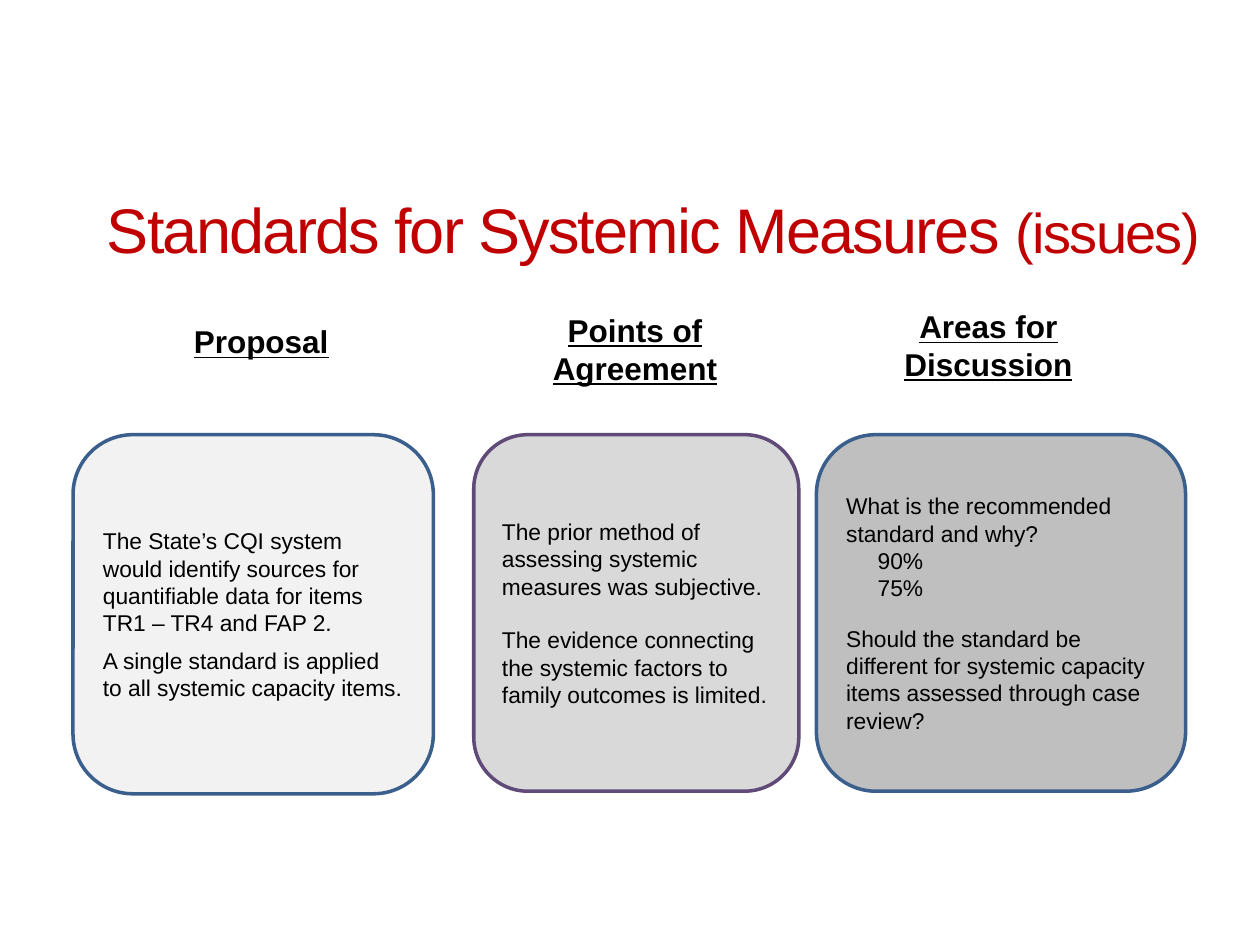
from pptx import Presentation
from pptx.dml.color import RGBColor
from pptx.enum.shapes import MSO_SHAPE as Shape
from pptx.enum.text import MSO_ANCHOR as Anchor, MSO_AUTO_SIZE as AutoSize, PP_ALIGN as Align
from pptx.util import Inches, Pt

COLORS = {
    "title": "C00000", "text": "000000", "blue": "3A5F8C", "purple": "5F4A78",
    "light": "F2F2F2", "medium": "D9D9D9", "dark": "BFBFBF",
}
TITLE = [("Standards for Systemic Measures ", 36), ("(issues)", 32)]
HEADINGS = [
    ("Proposal", (1.44, 2.51, 1.27, 0.39), False),
    ("Points of Agreement", (4.04, 2.42, 2, 0.68), True),
    ("Areas for Discussion", (6.83, 2.39, 2.03, 0.68), True),
]
CARD_TOP = 3.45
CARDS = [
    {"left": 0.58, "width": 2.86, "height": 2.85, "fill": "light", "line": "blue", "paragraphs": [
        ("The State’s CQI system would identify sources for quantifiable data "
         "for items TR1 – TR4 and FAP 2.", {"after": 6}),
        ("A single standard is applied to all systemic capacity items.", {"after": 6}),
    ]},
    {"left": 3.76, "width": 2.58, "height": 2.83, "fill": "medium", "line": "purple", "paragraphs": [
        ("The prior method of assessing systemic measures was subjective.", {}),
        ("The evidence connecting the systemic factors to family outcomes is limited.",
         {"before": 15}),
    ]},
    {"left": 6.48, "width": 2.93, "height": 2.83, "fill": "dark", "line": "blue", "paragraphs": [
        ("What is the recommended standard and why?", {}),
        ("90%", {"indented": True}),
        ("75%", {"indented": True}),
        ("Should the standard be different for systemic capacity items assessed "
         "through case review?", {"before": 13}),
    ]},
]


def rgb(name):
    return RGBColor.from_string(COLORS[name])


def write(paragraph, text, size=13, color="text", bold=None, underline=None, align=Align.LEFT,
          before=0, after=0, indented=False, tracking=None):
    paragraph.alignment = align
    paragraph.space_before, paragraph.space_after = Pt(before), Pt(after)
    if indented:
        properties = paragraph._p.get_or_add_pPr()
        properties.set("marL", str(Inches(0.5)))
        properties.set("indent", str(Inches(-0.25)))
    run = paragraph.add_run()
    run.text = text
    font = run.font
    font.name, font.size, font.bold, font.underline = "Arial", Pt(size), bold, underline
    font.color.rgb = rgb(color)
    if tracking:
        run._r.get_or_add_rPr().set("spc", str(tracking))


presentation = Presentation()
presentation.slide_width, presentation.slide_height = Inches(10), Inches(7.5)
slide = presentation.slides.add_slide(presentation.slide_layouts[6])

title = slide.shapes.add_textbox(*map(Inches, (0.75, 1.19, 9, 1.25))).text_frame
title.word_wrap, title.vertical_anchor = True, Anchor.MIDDLE
for text, size in TITLE:
    write(title.paragraphs[0], text, size=size, color="title", tracking=-100)

for text, box, wraps in HEADINGS:
    frame = slide.shapes.add_textbox(*map(Inches, box)).text_frame
    frame.word_wrap, frame.auto_size = wraps, AutoSize.SHAPE_TO_FIT_TEXT
    write(frame.paragraphs[0], text, size=18, bold=True, underline=True,
          align=Align.CENTER if wraps else Align.LEFT)

for card in CARDS:
    box = (card["left"], CARD_TOP, card["width"], card["height"])
    shape = slide.shapes.add_shape(Shape.ROUNDED_RECTANGLE, *map(Inches, box))
    shape.shadow.inherit = False
    shape.fill.solid()
    shape.fill.fore_color.rgb = rgb(card["fill"])
    shape.line.color.rgb = rgb(card["line"])
    shape.line.width = Pt(2)
    frame = shape.text_frame
    frame.word_wrap, frame.vertical_anchor = True, Anchor.MIDDLE
    for index, (text, options) in enumerate(card["paragraphs"]):
        paragraph = frame.add_paragraph() if index else frame.paragraphs[0]
        write(paragraph, text, **options)

presentation.save("out.pptx")
